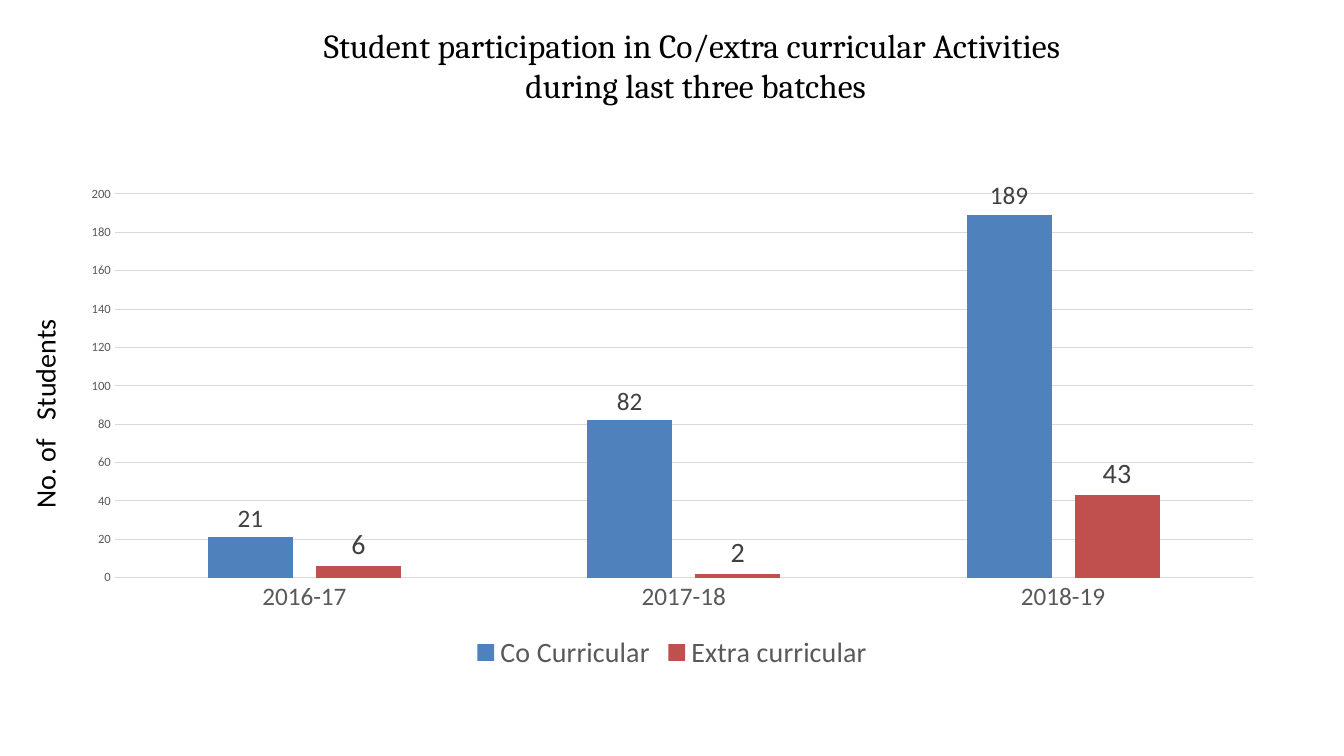
from pptx import Presentation
from pptx.chart.data import CategoryChartData
from pptx.dml.color import RGBColor
from pptx.enum.chart import XL_CHART_TYPE as ChartType
from pptx.enum.chart import XL_LABEL_POSITION as LabelPosition
from pptx.enum.chart import XL_LEGEND_POSITION as LegendPosition
from pptx.enum.chart import XL_TICK_MARK as TickMark
from pptx.enum.text import MSO_ANCHOR as Anchor
from pptx.enum.text import PP_ALIGN as Align
from pptx.util import Cm, Pt

BLACK = RGBColor(0x00, 0x00, 0x00)
DARK_GREY = RGBColor(0x40, 0x40, 0x40)
GREY = RGBColor(0x59, 0x59, 0x59)
LIGHT_GREY = RGBColor(0xD9, 0xD9, 0xD9)
BLUE = RGBColor(0x4F, 0x81, 0xBD)
RED = RGBColor(0xC0, 0x50, 0x4D)

BATCHES = ["2016-17", "2017-18", "2018-19"]
ACTIVITIES = [
    ("Co Curricular", [21, 82, 189], BLUE, 18),
    ("Extra curricular", [6, 2, 43], RED, 20),
]


def style_font(font, size, color, name="Calibri"):
    font.name = name
    font.size = Pt(size)
    font.color.rgb = color


def style_line(line):
    line.color.rgb = LIGHT_GREY
    line.width = Pt(0.75)


def add_title(page, left, top, width, height):
    box = page.shapes.add_textbox(left, top, width, height)
    frame = box.text_frame
    frame.word_wrap = True
    frame.vertical_anchor = Anchor.TOP
    para = frame.paragraphs[0]
    para.text = (
        "Student participation in Co/extra curricular Activities \v"
        "during last three batches"
    )
    para.alignment = Align.CENTER
    style_font(para.font, 24, BLACK, "Cambria")


def add_axis_caption(page, left, top, width, height):
    box = page.shapes.add_textbox(
        left + (width - height) // 2, top + (height - width) // 2, height, width
    )
    box.rotation = 270
    frame = box.text_frame
    frame.word_wrap = True
    para = frame.paragraphs[0]
    style_font(para.font, 20, BLACK)
    for text in ("No. of", " ", "Students"):
        span = para.add_run()
        span.text = text
        if text == " ":
            span.font._element.set("spc", "900")


def style_axes(chart):
    batches, students = chart.category_axis, chart.value_axis
    for axis, size in ((batches, 18), (students, 9)):
        axis.major_tick_mark = TickMark.NONE
        axis.minor_tick_mark = TickMark.NONE
        style_font(axis.tick_labels.font, size, GREY)
    style_line(batches.format.line)
    students.format.line.fill.background()
    students.has_major_gridlines = True
    style_line(students.major_gridlines.format.line)
    students.minimum_scale = 0
    students.maximum_scale = 200
    students.major_unit = 20


def add_participation_chart(page, left, top, width, height):
    data = CategoryChartData()
    data.categories = BATCHES
    for name, values, _, _ in ACTIVITIES:
        data.add_series(name, values)
    chart = page.shapes.add_chart(
        ChartType.COLUMN_CLUSTERED, left, top, width, height, data
    ).chart
    style_font(chart.font, 10, BLACK)
    chart.has_title = False
    chart.has_legend = True
    chart.legend.position = LegendPosition.BOTTOM
    chart.legend.include_in_layout = False
    style_font(chart.legend.font, 20, GREY)
    style_axes(chart)

    plot = chart.plots[0]
    plot.gap_width = 219
    plot.overlap = -27
    plot.vary_by_categories = False
    for series, (_, _, color, label_size) in zip(plot.series, ACTIVITIES):
        series.format.fill.solid()
        series.format.fill.fore_color.rgb = color
        series.invert_if_negative = False
        labels = series.data_labels
        labels.show_value = True
        labels.position = LabelPosition.OUTSIDE_END
        style_font(labels.font, label_size, DARK_GREY)


def main():
    deck = Presentation()
    deck.slide_width = Cm(33.87)
    deck.slide_height = Cm(19.05)
    page = deck.slides.add_slide(deck.slide_layouts[6])
    add_title(page, Cm(2.29), Cm(0.5), Cm(30.48), Cm(3.18))
    add_participation_chart(page, Cm(1.7), Cm(4.45), Cm(30.48), Cm(12.57))
    add_axis_caption(page, Cm(0.57), Cm(6.69), Cm(1.12), Cm(6.38))
    deck.save("out.pptx")


if __name__ == "__main__":
    main()
